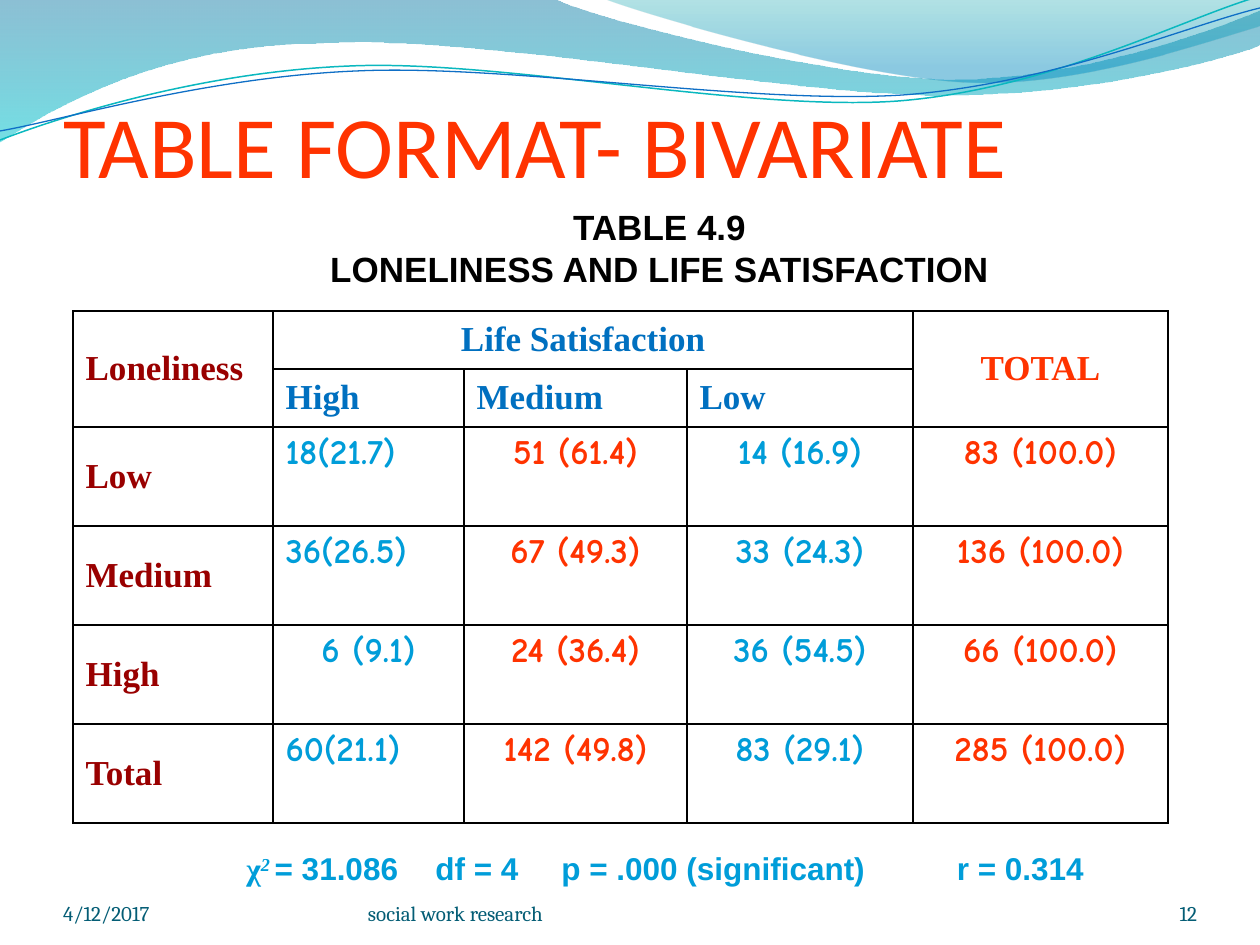
from lxml.etree import SubElement
from pptx import Presentation
from pptx.dml.color import RGBColor
from pptx.enum.text import MSO_ANCHOR, MSO_AUTO_SIZE, PP_ALIGN
from pptx.oxml.ns import qn
from pptx.util import Emu, Pt

SCALE = 914400 / 126
RED, BLUE, SKY, MAROON, TEAL = "FF3300", "0070C0", "009DD9", "990000", "045D75"
SERIF, HAND = "Times New Roman", "Comic Neue"
LEFT, MID, RIGHT = PP_ALIGN.LEFT, PP_ALIGN.CENTER, PP_ALIGN.RIGHT

# Each step is a line (x, y) or a curve (two controls and an end)
BAND = [(0, -1), (554, -1), (600, 21, 837, 79, 955, 79),
        (1075, 79, 1207, 33, 1260, 11), (1261, 45),
        (1239, 55, 1096, 96, 940, 95), (784, 95, 481, 35, 324, 43),
        (163, 44, 58, 105, -1, 142)]
CREST = [(604, -1), (641, 14, 859, 78, 969, 82),
         (1079, 87, 1211, 40, 1260, 26), (1260, 0)]
GREEN = [(0, 140), (60, 117, 199, 72, 349, 66),
         (498, 59, 747, 112, 898, 101), (1050, 89, 1182, 19, 1257, -3)]
NAVY = [(0, 131), (59, 121, 207, 77, 357, 71),
        (508, 64, 752, 105, 903, 95), (1053, 84, 1186, 26, 1260, 8)]

COLS = [200, 191, 223, 226, 255]
ROWS = [58, 58, 99, 99, 99, 99]
DATA = [
    ["Low", "18(21.7)", "51 (61.4)", "14 (16.9)", "83 (100.0)"],
    ["Medium", "36(26.5)", "67 (49.3)", "33 (24.3)", "136 (100.0)"],
    ["High", "6 (9.1)", "24 (36.4)", "36 (54.5)", "66 (100.0)"],
    ["Total", "60(21.1)", "142 (49.8)", "83 (29.1)", "285 (100.0)"],
]


def px(n):
    return Emu(round(n * SCALE))


def rgb(code):
    return RGBColor.from_string(code)


def style(para, size, face, color, bold=False, align=LEFT):
    para.alignment = align
    for run in para.runs:
        font = run.font
        font.size, font.name, font.bold = Pt(size), face, bold
        font.color.rgb = rgb(color)


def outline(slide, steps, close):
    ends = [(px(step[-2]), px(step[-1])) for step in steps]
    pen = slide.shapes.build_freeform(*ends[0])
    pen.add_line_segments(ends[1:], close=close)
    shape = pen.convert_to_shape()
    shape.shadow.inherit = False
    # Bend the segments that have control points
    lines = list(shape._element.iter(qn("a:lnTo")))
    for line, step in zip(lines, steps[1:]):
        if len(step) == 6:
            curve = line.makeelement(qn("a:cubicBezTo"), {})
            for x, y in zip(step[::2], step[1::2]):
                SubElement(curve, qn("a:pt"), x=str(px(x) - shape.left),
                           y=str(px(y) - shape.top))
            line.getparent().replace(line, curve)
    return shape


def add_wave(slide, steps, stops):
    shape = outline(slide, steps, True)
    shape.line.fill.background()
    shape.fill.gradient()
    shape.fill.gradient_angle = 270
    for stop, (place, color, _) in zip(shape.fill.gradient_stops, stops):
        stop.position = place
        stop.color.rgb = rgb(color)
    tints = shape._element.spPr.iter(qn("a:srgbClr"))
    for tint, (_, _, alpha) in zip(tints, stops):
        SubElement(tint, qn("a:alpha"), val=str(alpha * 1000))


def add_curve(slide, steps, color, width):
    shape = outline(slide, steps, False)
    shape.fill.background()
    shape.line.color.rgb = rgb(color)
    shape.line.width = Pt(width)


def add_title(slide, x, y, w, h):
    title = slide.shapes.title
    title.left, title.top, title.width, title.height = map(px, (x, y, w, h))
    frame = title.text_frame
    frame.text = "TABLE FORMAT- BIVARIATE"
    frame.auto_size = MSO_AUTO_SIZE.NONE
    frame.vertical_anchor = MSO_ANCHOR.BOTTOM
    frame.margin_left = frame.margin_right = frame.margin_bottom = 0
    style(frame.paragraphs[0], 50, "Calibri", RED)
    # Keep the title in front of the waves
    slide.shapes._spTree.append(title._element)


def add_text(slide, x, y, w, h, text, anchor=MSO_ANCHOR.TOP):
    frame = slide.shapes.add_textbox(*map(px, (x, y, w, h))).text_frame
    frame.word_wrap = True
    frame.vertical_anchor = anchor
    frame.text = text
    return frame


def indent(para):
    para._p.get_or_add_pPr().set("indent", str(px(63)))


def add_head(slide, x, y, w, h):
    text = "TABLE 4.9\nLONELINESS AND LIFE SATISFACTION"
    for para in add_text(slide, x, y, w, h, text).paragraphs:
        style(para, 20, "Arial", "000000", True, MID)
        indent(para)


def add_edges(cell):
    props = cell._tc.get_or_add_tcPr()
    for i, side in enumerate(("lnL", "lnR", "lnT", "lnB")):
        edge = props.makeelement(qn("a:" + side), {"w": str(Pt(1))})
        fill = SubElement(edge, qn("a:solidFill"))
        SubElement(fill, qn("a:srgbClr"), val="000000")
        props.insert(i, edge)


def put(cell, text, face, color, align=LEFT, middle=True):
    cell.text = text
    if middle:
        cell.vertical_anchor = MSO_ANCHOR.MIDDLE
    style(cell.text_frame.paragraphs[0], 20, face, color, True, align)


def add_grid(slide, x, y):
    box = map(px, (x, y, sum(COLS), sum(ROWS)))
    table = slide.shapes.add_table(len(ROWS), len(COLS), *box).table
    table.first_row = table.horz_banding = False
    for col, width in zip(table.columns, COLS):
        col.width = px(width)
    for row, height in zip(table.rows, ROWS):
        row.height = px(height)
    for cell in table.iter_cells():
        cell.fill.background()
        add_edges(cell)
    # Header rows
    table.cell(0, 0).merge(table.cell(1, 0))
    table.cell(0, 1).merge(table.cell(0, 3))
    table.cell(0, 4).merge(table.cell(1, 4))
    put(table.cell(0, 0), "Loneliness", SERIF, MAROON)
    put(table.cell(0, 1), "Life Satisfaction", SERIF, BLUE)
    table.cell(0, 1).margin_left = px(188)
    put(table.cell(0, 4), "TOTAL", SERIF, RED, MID)
    for c, text in enumerate(("High", "Medium", "Low"), 1):
        put(table.cell(1, c), text, SERIF, BLUE)
    # Counts with percentages
    for r, (label, *counts) in enumerate(DATA, 2):
        put(table.cell(r, 0), label, SERIF, MAROON)
        for c, text in enumerate(counts, 1):
            align = MID if " " in text else LEFT
            color = SKY if c % 2 else RED
            put(table.cell(r, c), text, HAND, color, align, False)


def add_stats(slide, x, y, w, h):
    frame = add_text(slide, x, y, w, h, "χ", MSO_ANCHOR.MIDDLE)
    para = frame.paragraphs[0]
    power, rest = para.add_run(), para.add_run()
    power.text = "2 "
    rest.text = "= 31.086\tdf = 4\tp = .000 (significant)\t\t  r = 0.314"
    style(para, 18, SERIF, SKY, True)
    power.font.italic = True
    power.font._element.set("baseline", "30000")
    rest.font.name = "Arial"
    indent(para)


def add_foot(slide, y, h):
    parts = [(63, 294, "4/12/2017", LEFT),
             (368, 462, "social work research", LEFT),
             (1092, 105, "12", RIGHT)]
    for x, w, text, align in parts:
        frame = add_text(slide, x, y, w, h, text, MSO_ANCHOR.BOTTOM)
        frame.margin_left = frame.margin_right = 0
        frame.margin_top = frame.margin_bottom = 0
        style(frame.paragraphs[0], 12, "Cambria", TEAL, align=align)


def main():
    deck = Presentation()
    deck.slide_width, deck.slide_height = px(1260), px(945)
    slide = deck.slides.add_slide(deck.slide_layouts[5])
    add_wave(slide, BAND, [(0, "0074A1", 45), (1, "00C6CF", 55)])
    add_wave(slide, CREST, [(0, "00A1A9", 30), (0.8, "008BBF", 45)])
    add_curve(slide, GREEN, "0AB8BF", 0.85)
    add_curve(slide, NAVY, "0F6FC6", 0.75)
    add_title(slide, 63, 38, 1134, 158)
    add_head(slide, 252, 199, 752, 139)
    add_grid(slide, 73, 311)
    add_stats(slide, 171, 843, 1075, 50)
    add_foot(slide, 876, 50)
    deck.save("out.pptx")


if __name__ == "__main__":
    main()
